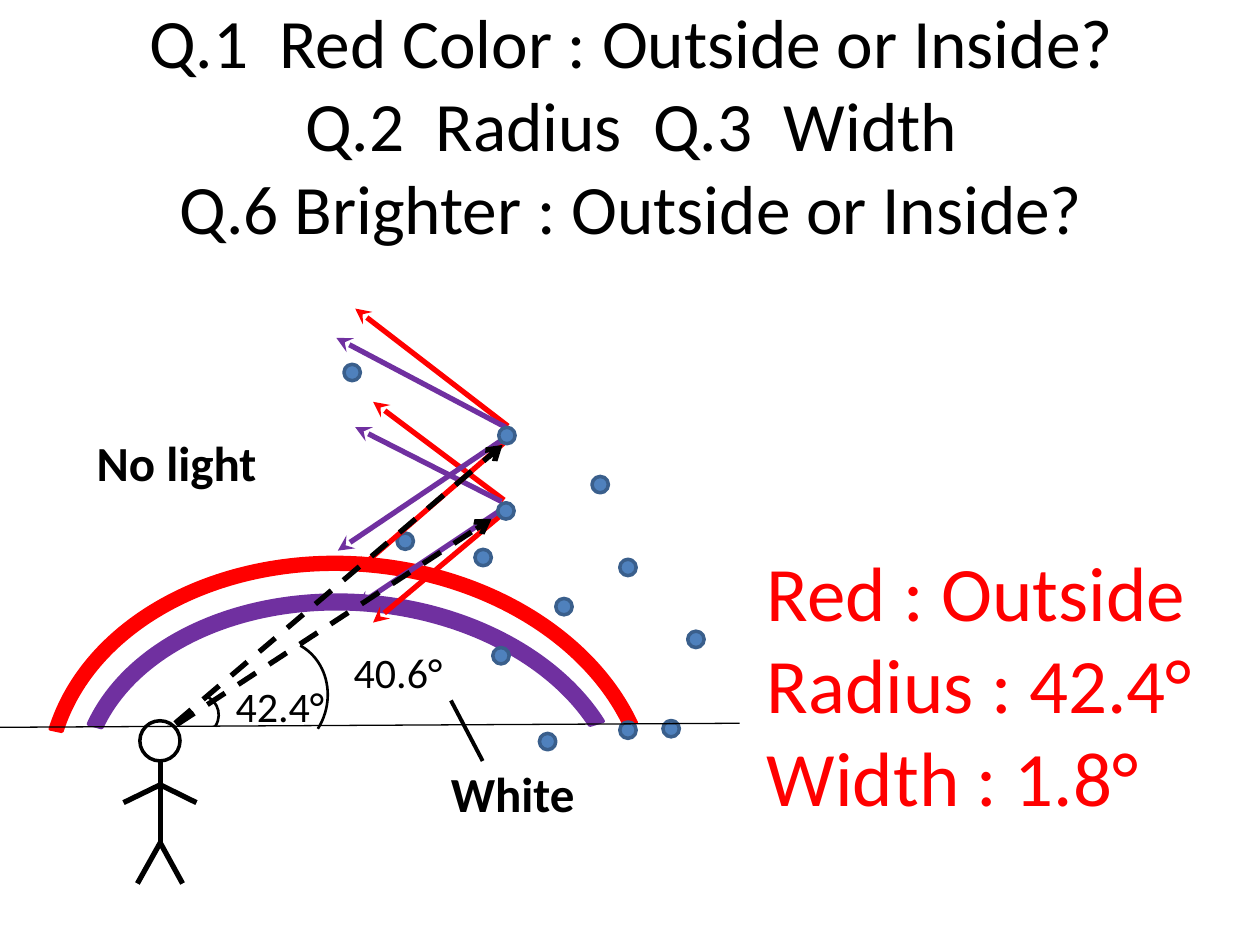
from lxml import etree
from pptx import Presentation
from pptx.dml.color import RGBColor
from pptx.enum import dml, shapes, text
from pptx.oxml.ns import qn
from pptx.util import Cm, Pt

COLORS = {
    "black": "000000",
    "white": "FFFFFF",
    "red": "FF0000",
    "violet": "7030A0",
    "drop": "4F81BD",
    "drop edge": "3A5F8C",
}
FONT = "Calibri"

# All positions and sizes below are in centimetres.
QUESTIONS = [
    "Q.1  Red Color : Outside or Inside?",
    "Q.2  Radius  Q.3  Width",
    "Q.6 Brighter : Outside or Inside?",
]
ANSWERS = ["Red : Outside", "Radius : 42.4°", "Width : 1.8°"]

# color, box, adjustments
BOWS = [
    ("red", (0.84, 11.25, 12.37, 9.5), (112.47, 204.8, 0.025)),
    ("violet", (1.5, 12.01, 11.2, 8.1), (114.36, 203.08, 0.034)),
]
BOW_TILT = 4.8

HEAD = (2.82, 14.53, 0.81, 0.81)
NECK, SHOULDER, HIP = (3.23, 15.34), (3.23, 15.82), (3.23, 16.99)
LIMBS = [
    (NECK, HIP),
    (HIP, (2.77, 17.81)),
    (HIP, (3.68, 17.81)),
    ((2.49, 16.18), SHOULDER),
    ((3.96, 16.18), SHOULDER),
]

DROP_SIZE = 0.33
DROP_CENTERS = [
    (9.74, 11.24), (10.1, 13.22), (12.66, 11.44), (14.03, 12.89),
    (11.37, 12.23), (11.04, 14.95), (13.53, 14.69), (8.17, 10.91),
    (12.66, 14.72), (12.1, 9.77), (7.1, 7.51),
]
LIT_DROP_CENTERS = [(10.22, 8.78), (10.2, 10.3)]

RAYS = [
    ("red", (10.16, 10.08), (7.52, 8.1)),
    ("red", (10.19, 10.31), (7.52, 12.55)),
    ("violet", (10.11, 10.11), (7.16, 8.61)),
    ("violet", (10.13, 10.26), (7.19, 12.22)),
    ("red", (10.24, 8.59), (7.16, 6.22)),
    ("red", (10.26, 8.84), (7.16, 11.53)),
    ("violet", (10.19, 8.61), (6.78, 6.81)),
    ("violet", (10.24, 8.79), (6.81, 11.1)),
]
SIGHT_LINES = [((3.56, 14.61), (9.91, 10.46)), ((3.53, 14.58), (10.13, 8.97))]
HORIZON = ((14.91, 14.58), (-3.35, 14.68))
WHITE_POINTER = ((9.73, 15.34), (9.09, 14.12))

# label, label box, arc box
ANGLES = [
    ("42.4°", (4.5, 13.59, 3, 1.27), (3.61, 14.02, 0.81, 0.79)),
    ("40.6°", (6.88, 12.9, 3.2, 1.27), (4.34, 12.98, 2.36, 2.16)),
]
ANGLE_ADJUSTMENTS = (150.86, 209.89)
ANGLE_TILT = 106.8

REGIONS = [
    ("No light", (1.7, 8.59, 3.99, 1.45)),
    ("White", (8.84, 15.27, 3.4, 1.45)),
]


def rgb(name):
    return RGBColor.from_string(COLORS[name])


def lengths(values):
    return [Cm(value) for value in values]


def add_outline(slide, kind, box, line, width, fill=None, adjustments=(), tilt=0):
    shape = slide.shapes.add_shape(kind, *lengths(box))
    shape.shadow.inherit = False
    for index, value in enumerate(adjustments):
        shape.adjustments[index] = value
    shape.rotation = tilt
    if fill:
        shape.fill.solid()
        shape.fill.fore_color.rgb = rgb(fill)
    else:
        shape.fill.background()
    shape.line.color.rgb = rgb(line)
    shape.line.width = Pt(width)
    return shape


def add_drop(slide, center):
    x, y = (value - DROP_SIZE / 2 for value in center)
    add_outline(slide, shapes.MSO_SHAPE.OVAL, (x, y, DROP_SIZE, DROP_SIZE),
                "drop edge", 2, "drop")


def add_line(slide, start, end, color="black", width=3.0, arrow=None, dashed=False):
    connector = slide.shapes.add_connector(
        shapes.MSO_CONNECTOR.STRAIGHT, *lengths(start + end))
    connector.line.color.rgb = rgb(color)
    connector.line.width = Pt(width)
    if dashed:
        connector.line.dash_style = dml.MSO_LINE.DASH
    if arrow:
        etree.SubElement(connector.line._get_or_add_ln(), qn("a:tailEnd"), type=arrow)
    etree.SubElement(connector.element.spPr, qn("a:effectLst"))


def add_text(slide, content, box, size, color="black", bold=False, fill=None,
             align=text.PP_ALIGN.LEFT, anchor=text.MSO_ANCHOR.TOP, wrap=True):
    shape = slide.shapes.add_textbox(*lengths(box))
    if fill:
        shape.fill.solid()
        shape.fill.fore_color.rgb = rgb(fill)
    frame = shape.text_frame
    frame.word_wrap = wrap
    frame.vertical_anchor = anchor
    frame.text = content
    for paragraph in frame.paragraphs:
        paragraph.alignment = align
        paragraph.font.name = FONT
        paragraph.font.size = Pt(size)
        paragraph.font.bold = bold
        paragraph.font.color.rgb = rgb(color)


def main():
    presentation = Presentation()
    presentation.slide_width, presentation.slide_height = Cm(25.4), Cm(19.05)
    slide = presentation.slides.add_slide(presentation.slide_layouts[6])

    add_text(slide, "\v".join(QUESTIONS), (1.3, 0.91, 22.86, 3.18), 39.6,
             align=text.PP_ALIGN.CENTER, anchor=text.MSO_ANCHOR.MIDDLE)
    add_text(slide, "\n".join(ANSWERS), (15.21, 10.85, 10.26, 5.89), 44, "red",
             wrap=False)

    for color, box, adjustments in BOWS:
        add_outline(slide, shapes.MSO_SHAPE.BLOCK_ARC, box, color, 2, color,
                    adjustments, BOW_TILT)

    add_outline(slide, shapes.MSO_SHAPE.OVAL, HEAD, "black", 2)
    for start, end in LIMBS:
        add_line(slide, start, end)

    for center in DROP_CENTERS:
        add_drop(slide, center)
    for color, start, end in RAYS:
        add_line(slide, start, end, color, arrow="stealth")
    for start, end in SIGHT_LINES:
        add_line(slide, start, end, arrow="arrow", dashed=True)
    for center in LIT_DROP_CENTERS:
        add_drop(slide, center)

    add_line(slide, *HORIZON, width=0.75)
    for label, label_box, arc_box in ANGLES:
        arc = add_outline(slide, shapes.MSO_SHAPE.ARC, arc_box, "black", 1.5,
                          adjustments=ANGLE_ADJUSTMENTS, tilt=ANGLE_TILT)
        arc.element.spPr.find(qn("a:xfrm")).set("flipH", "1")
        add_text(slide, label, label_box, 24)

    for label, box in REGIONS:
        add_text(slide, label, box, 28, bold=True, fill="white")
    add_line(slide, *WHITE_POINTER, width=2.25)

    presentation.save("out.pptx")


if __name__ == "__main__":
    main()
